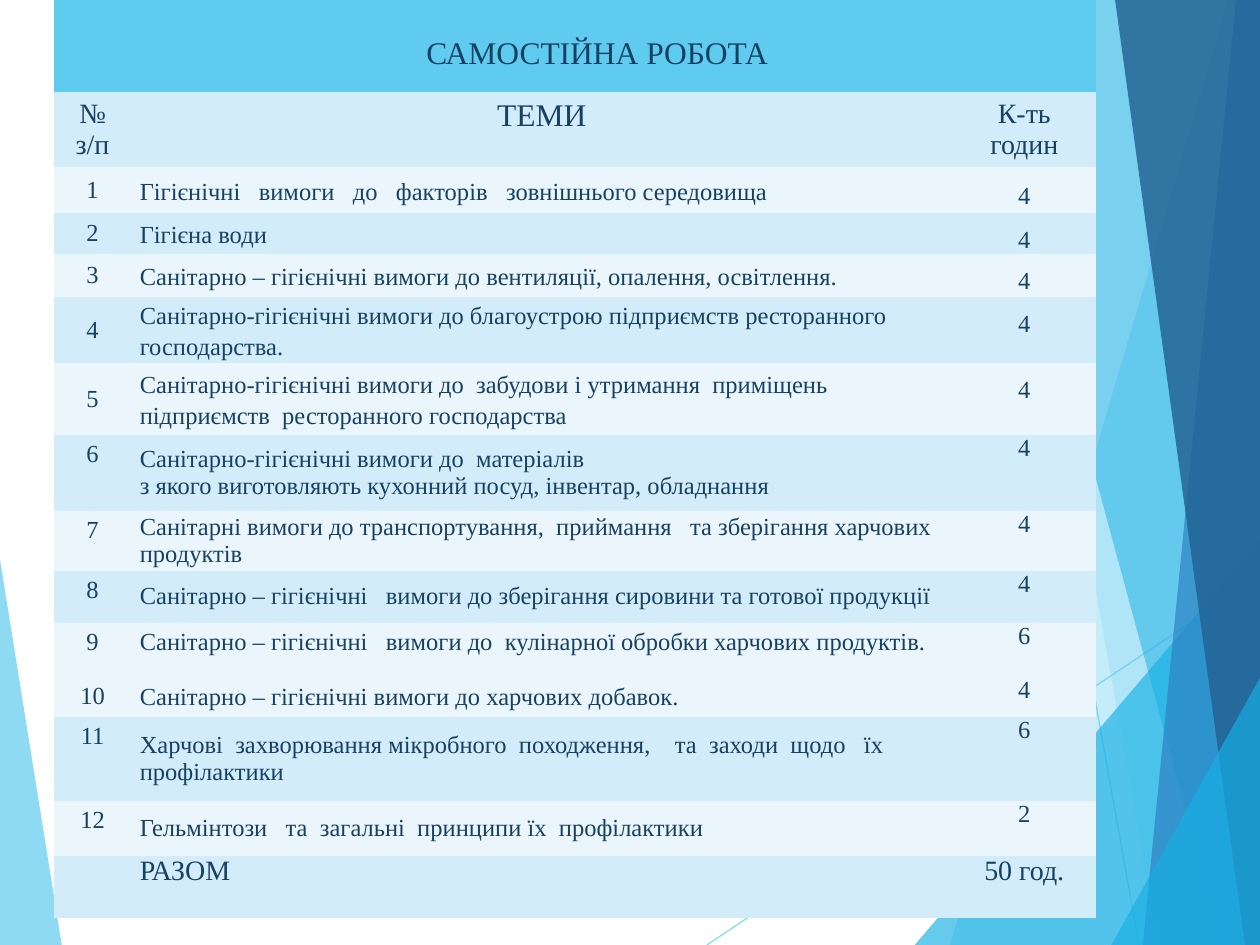
from dataclasses import dataclass
from typing import Optional

from lxml import etree
from pptx import Presentation
from pptx import util as u
from pptx.dml.color import RGBColor
from pptx.enum import shapes, text
from pptx.oxml.ns import qn


@dataclass(frozen=True)
class Theme:
    font: str = "Times New Roman"
    ink: str = "174162"
    sky: str = "5FCBEF"
    azure: str = "17B0E4"
    blue: str = "2E83C3"
    navy: str = "226292"
    dark_band: str = "D2ECF9"
    light_band: str = "EAF6FC"
    title_size: float = 18
    heading_size: float = 16
    body_size: float = 14
    entry_gap: float = 15.5
    paragraph_gap: float = 10


@dataclass(frozen=True)
class Facet:
    points: tuple[tuple[float, float], ...]
    color: str
    opacity: int


@dataclass(frozen=True)
class Ray:
    start: tuple[float, float]
    end: tuple[float, float]


@dataclass(frozen=True)
class CellStyle:
    size: float
    centered: bool = True
    middle: bool = False
    tight: bool = True
    line_spacing: Optional[float] = None
    space_after: float = 0


@dataclass(frozen=True)
class Topic:
    numbers: tuple[str, ...]
    themes: tuple[str, ...]
    hours: tuple[str, ...]
    height: float
    spaced: bool = False
    gap: float = 0


THEME = Theme()
WIDTH, HEIGHT = u.Inches(10), u.Inches(7.5)
TABLE_LEFT, TABLE_TOP = 4.3, -1.47
COLUMNS = (6.1, 65.2, 11.4)
TITLE_ROW, HEADING_ROW, TOTAL_ROW = 11.2, 7.94, 6.56

LEFT_FACET = Facet(((0, 59.2), (4.9, 100), (0, 100)), THEME.sky, 70)
RAYS = (Ray((56.1, 100), (100, 61)), Ray((77, 0), (90.4, 100)))
RIGHT_FACETS = (
    Facet(((97.5, 0), (75.4, 100), (100, 100), (100, 0)), THEME.sky, 36),
    Facet(((78.8, 0), (91.9, 100), (100, 100), (100, 0)), THEME.sky, 20),
    Facet(((72.6, 100), (100, 57.2), (100, 100)), THEME.azure, 66),
    Facet(((76.7, 0), (97, 100), (100, 100), (100, 0)), THEME.azure, 50),
    Facet(((98.1, 0), (90.7, 100), (100, 100), (100, 0)), THEME.blue, 70),
    Facet(((88.5, 0), (98.8, 100), (100, 100), (100, 0)), THEME.navy, 82),
    Facet(((88.2, 100), (100, 71.7), (100, 100)), THEME.azure, 66),
)
TOPICS = (
    Topic(("1",), ("Гігієнічні   вимоги   до   факторів   зовнішнього середовища",), ("4",), 4.87, True),
    Topic(("2",), ("Гігієна води",), ("4",), 4.34, True),
    Topic(("3",), ("Санітарно – гігієнічні вимоги до вентиляції, опалення, освітлення.",), ("4",), 4.55, True),
    Topic(("4",), ("Санітарно-гігієнічні вимоги до благоустрою підприємств ресторанного господарства.",),
          ("4",), 6.98, True),
    Topic(("5",), ("Санітарно-гігієнічні вимоги до  забудови і утримання  приміщень "
                   "підприємств  ресторанного господарства",), ("4",), 7.62, True),
    Topic(("6",), ("Санітарно-гігієнічні вимоги до  матеріалів",
                   "з якого виготовляють кухонний посуд, інвентар, обладнання"), ("4",), 8.04),
    Topic(("7",), ("Санітарні вимоги до транспортування,  приймання   та зберігання харчових продуктів",),
          ("4",), 6.35),
    Topic(("8",), ("Санітарно – гігієнічні   вимоги до зберігання сировини та готової продукції",), ("4",), 5.5),
    Topic(("9", "10"), ("Санітарно – гігієнічні   вимоги до  кулінарної обробки харчових продуктів.",
                        "Санітарно – гігієнічні вимоги до харчових добавок."),
          ("6", "4"), 9.95, gap=THEME.entry_gap),
    Topic(("11",), ("Харчові  захворювання мікробного  походження,    та  заходи  щодо   їх  профілактики",),
          ("6",), 8.89),
    Topic(("12",), ("Гельмінтози   та  загальні  принципи їх  профілактики",), ("2",), 5.82),
)


def across(percent: float) -> int:
    return round(WIDTH * percent / 100)


def down(percent: float) -> int:
    return round(HEIGHT * percent / 100)


def set_opacity(color_element, opacity: int) -> None:
    etree.SubElement(color_element, qn("a:alpha")).set("val", str(opacity * 1000))


def draw_facet(slide, facet: Facet) -> None:
    points = [(across(x), down(y)) for x, y in facet.points]
    builder = slide.shapes.build_freeform(*points[0], scale=1.0)
    builder.add_line_segments(points[1:], close=True)
    shape = builder.convert_to_shape()
    shape.shadow.inherit = False
    shape.fill.solid()
    shape.fill.fore_color.rgb = RGBColor.from_string(facet.color)
    set_opacity(shape._element.spPr.find(".//" + qn("a:srgbClr")), facet.opacity)
    shape.line.fill.background()


def draw_ray(slide, ray: Ray) -> None:
    connector = slide.shapes.add_connector(
        shapes.MSO_CONNECTOR.STRAIGHT, across(ray.start[0]), down(ray.start[1]),
        across(ray.end[0]), down(ray.end[1]))
    connector.line.color.rgb = RGBColor.from_string(THEME.sky)
    connector.line.width = u.Pt(0.75)
    properties = connector._element.spPr
    set_opacity(properties.find(".//" + qn("a:srgbClr")), 70)
    etree.SubElement(properties, qn("a:effectLst"))


def write(text_frame, lines: tuple[str, ...], style: CellStyle) -> None:
    text_frame.text = "\n".join(lines)
    for paragraph in text_frame.paragraphs:
        paragraph.alignment = text.PP_ALIGN.CENTER if style.centered else text.PP_ALIGN.LEFT
        paragraph.line_spacing = style.line_spacing
        paragraph.space_after = u.Pt(style.space_after)
        for run in paragraph.runs:
            run.font.name = THEME.font
            run.font.size = u.Pt(style.size)
            run.font.color.rgb = RGBColor.from_string(THEME.ink)


def fill_cell(cell, lines: tuple[str, ...], style: CellStyle) -> None:
    if style.tight:
        cell.margin_left = cell.margin_right = u.Inches(0.07)
        cell.margin_top = cell.margin_bottom = 0
    cell.vertical_anchor = text.MSO_ANCHOR.MIDDLE if style.middle else text.MSO_ANCHOR.TOP
    write(cell.text_frame, lines, style)


def draw_topic(table, row: int, topic: Topic) -> None:
    size = THEME.body_size
    theme_gap = THEME.paragraph_gap if topic.spaced else topic.gap
    first = row == 2
    fill_cell(table.cell(row, 0), topic.numbers,
              CellStyle(size, middle=topic.spaced, tight=False, space_after=topic.gap))
    fill_cell(table.cell(row, 1), topic.themes,
              CellStyle(size, centered=False, middle=True, space_after=theme_gap,
                        line_spacing=1.15 if topic.spaced else None))
    fill_cell(table.cell(row, 2), topic.hours,
              CellStyle(size, middle=first, line_spacing=1.5 if topic.spaced else None,
                        space_after=THEME.paragraph_gap if first else topic.gap))


def draw_table(slide) -> None:
    heights = (TITLE_ROW, HEADING_ROW, *(topic.height for topic in TOPICS), TOTAL_ROW)
    table = slide.shapes.add_table(
        len(heights), len(COLUMNS), across(TABLE_LEFT), down(TABLE_TOP),
        across(sum(COLUMNS)), down(sum(heights))).table
    table._tbl.tblPr.find(qn("a:tableStyleId")).text = "{2D5ABB26-0587-4C30-8999-92F81FD0307C}"
    for column, width in zip(table.columns, COLUMNS):
        column.width = across(width)
    for index, (row, height) in enumerate(zip(table.rows, heights)):
        row.height = down(height)
        band = THEME.dark_band if index % 2 else THEME.light_band
        if index == len(heights) - 1 or index == 10:
            band = THEME.dark_band if index > 10 else THEME.light_band
        for cell in row.cells:
            cell.fill.solid()
            cell.fill.fore_color.rgb = RGBColor.from_string(THEME.sky if index == 0 else band)
    table.cell(0, 0).merge(table.cell(0, 2))

    for column, (label, size) in enumerate((
            ("№ з/п", THEME.heading_size), ("ТЕМИ", THEME.title_size), ("К-ть годин", THEME.heading_size))):
        fill_cell(table.cell(1, column), (label,), CellStyle(size, tight=False))
    for row, topic in enumerate(TOPICS, start=2):
        draw_topic(table, row, topic)
    total = len(heights) - 1
    fill_cell(table.cell(total, 1), ("РАЗОМ",), CellStyle(THEME.heading_size, centered=False))
    fill_cell(table.cell(total, 2), ("50 год.",), CellStyle(THEME.heading_size))


def draw_title(slide) -> None:
    box = slide.shapes.add_textbox(across(22.3), down(2.8), across(50.2), down(5.33))
    box.text_frame.word_wrap = True
    write(box.text_frame, ("САМОСТІЙНА РОБОТА",), CellStyle(THEME.title_size))


def main() -> None:
    presentation = Presentation()
    presentation.slide_width, presentation.slide_height = WIDTH, HEIGHT
    slide = presentation.slides.add_slide(presentation.slide_layouts[6])
    draw_facet(slide, LEFT_FACET)
    for ray in RAYS:
        draw_ray(slide, ray)
    for facet in RIGHT_FACETS:
        draw_facet(slide, facet)
    draw_table(slide)
    draw_title(slide)
    presentation.save("out.pptx")


if __name__ == "__main__":
    main()
